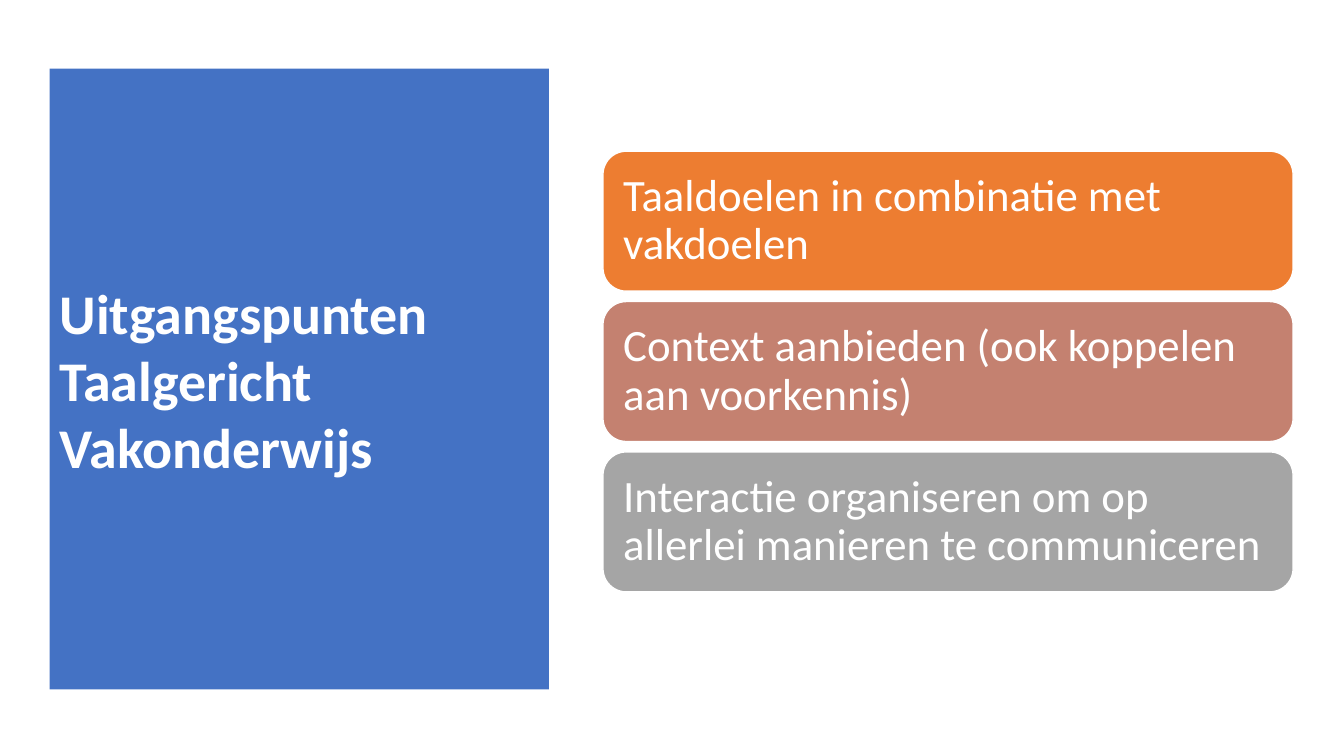
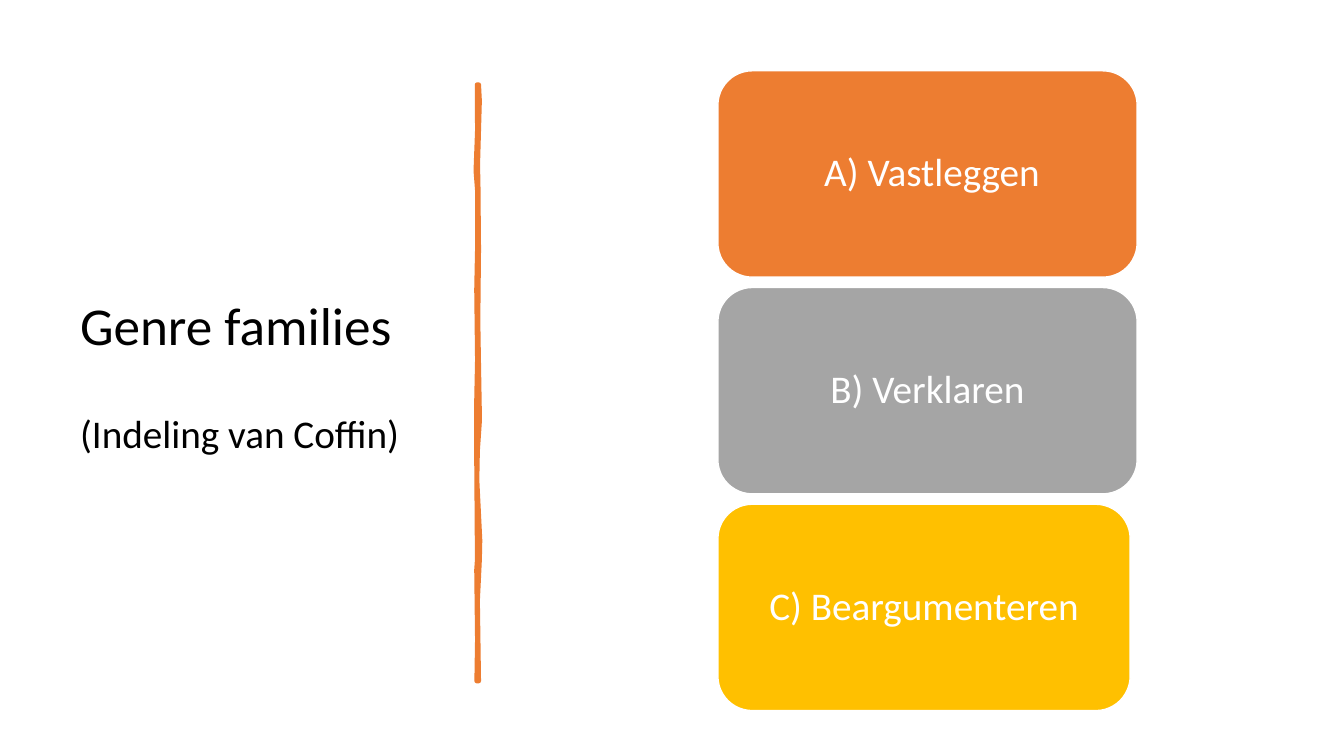
from lxml import etree
from pptx import Presentation
from pptx.dml.color import RGBColor
from pptx.enum import shapes, text
from pptx.oxml.ns import qn
from pptx.util import Pt

COLORS = {
    "white": "FFFFFF",
    "black": "000000",
    "blue": "4472C4",
    "orange": "ED7D31",
    "rose": "C48170",
    "gray": "A5A5A5",
    "gold": "FFC000",
}
FONT = "Calibri"
CARD_GAP = 7.4


def write(frame, lines, color, align, spacing, bold=False):
    """Fill a text frame with one paragraph per (wording, size, space before)."""
    frame.word_wrap = True
    frame.auto_size = text.MSO_AUTO_SIZE.NONE
    frame.vertical_anchor = text.MSO_ANCHOR.MIDDLE
    for index, (wording, size, before) in enumerate(lines):
        paragraph = frame.add_paragraph() if index else frame.paragraphs[0]
        paragraph.alignment = align
        paragraph.line_spacing = spacing
        paragraph.space_before = Pt(before)
        run = paragraph.add_run()
        run.text = wording
        run.font.name = FONT
        run.font.size = Pt(size)
        run.font.bold = bold
        run.font.color.rgb = RGBColor.from_string(COLORS[color])


def add_cards(slide, cards, left, top, height, size, align, inset_x, inset_y):
    """Stack rounded cards, each given as (wording, colour, width)."""
    for index, (wording, color, width) in enumerate(cards):
        card = slide.shapes.add_shape(
            shapes.MSO_SHAPE.ROUNDED_RECTANGLE,
            Pt(left), Pt(top + index * (height + CARD_GAP)), Pt(width), Pt(height))
        card.shadow.inherit = False
        card.fill.solid()
        card.fill.fore_color.rgb = RGBColor.from_string(COLORS[color])
        card.line.color.rgb = RGBColor.from_string(COLORS["white"])
        card.line.width = Pt(1)
        frame = card.text_frame
        frame.margin_left = frame.margin_right = Pt(inset_x)
        frame.margin_top = frame.margin_bottom = Pt(inset_y)
        write(frame, [(wording, size, 0)], "white", align, 0.9)


deck = Presentation()
deck.slide_width, deck.slide_height = Pt(960), Pt(540)
title_only = deck.slide_layouts[5]
LEFT, CENTER = text.PP_ALIGN.LEFT, text.PP_ALIGN.CENTER

# Slide 1: principles, with the title on a blue panel
principles = deck.slides.add_slide(title_only)
panel = principles.shapes.title
panel.left, panel.top, panel.width, panel.height = Pt(35.5), Pt(49), Pt(356.5), Pt(443.5)
panel.fill.solid()
panel.fill.fore_color.rgb = RGBColor.from_string(COLORS["blue"])
heading = ["Uitgangspunten", "Taalgericht", "Vakonderwijs"]
write(panel.text_frame, [(word, 40, 0) for word in heading], "white", LEFT, 1.0, bold=True)

add_cards(principles, [
    ("Taaldoelen in combinatie met vakdoelen", "orange", 493),
    ("Context aanbieden (ook koppelen aan voorkennis)", "rose", 493),
    ("Interactie organiseren om op allerlei manieren te communiceren", "gray", 493),
], left=430.7, top=108, height=100, size=32, align=LEFT, inset_x=9.6, inset_y=9.6)

# Slide 2: genre families
genres = deck.slides.add_slide(title_only)
genre_title = genres.shapes.title
genre_title.left, genre_title.top = Pt(50), Pt(50.4)
genre_title.width, genre_title.height = Pt(269), Pt(440)
write(genre_title.text_frame,
      [("Genre families", 38, 0), ("(Indeling van Coffin)", 28, 41)], "black", LEFT, 0.9)

# Hand-drawn divider: right edge downwards, left edge back up
right_edge = [(342, 60.5), (342.6, 72), (341.3, 118), (341.6, 132), (342, 178),
              (341.5, 229), (342, 261), (342.7, 300), (341.2, 322), (340.8, 343),
              (342.9, 386), (342.6, 400), (341.2, 429), (342, 486.5)]
left_edge = [(340.5, 486.5), (341, 457), (340.4, 407), (340.9, 400), (340.4, 329),
             (340.4, 286), (341, 257), (340.4, 207), (341, 178), (341, 136),
             (339.9, 122), (341, 93), (340.8, 60.5)]
outline = [(Pt(x), Pt(y)) for x, y in right_edge + left_edge]
builder = genres.shapes.build_freeform(*outline[0])
builder.add_line_segments(outline[1:], close=True)
divider = builder.convert_to_shape()
divider.shadow.inherit = False
divider.fill.solid()
divider.fill.fore_color.rgb = RGBColor.from_string(COLORS["orange"])
divider.line.color.rgb = RGBColor.from_string(COLORS["orange"])
divider.line.width = Pt(3.25)
etree.SubElement(divider.line._get_or_add_ln(), qn("a:round"))

add_cards(genres, [
    (" A) Vastleggen", "orange", 299.5),
    ("B) Verklaren", "gray", 299.5),
    ("C) Beargumenteren", "gold", 294.5),
], left=512.8, top=50.6, height=147.4, size=28, align=CENTER, inset_x=8.4, inset_y=4.2)

deck.save("out.pptx")
